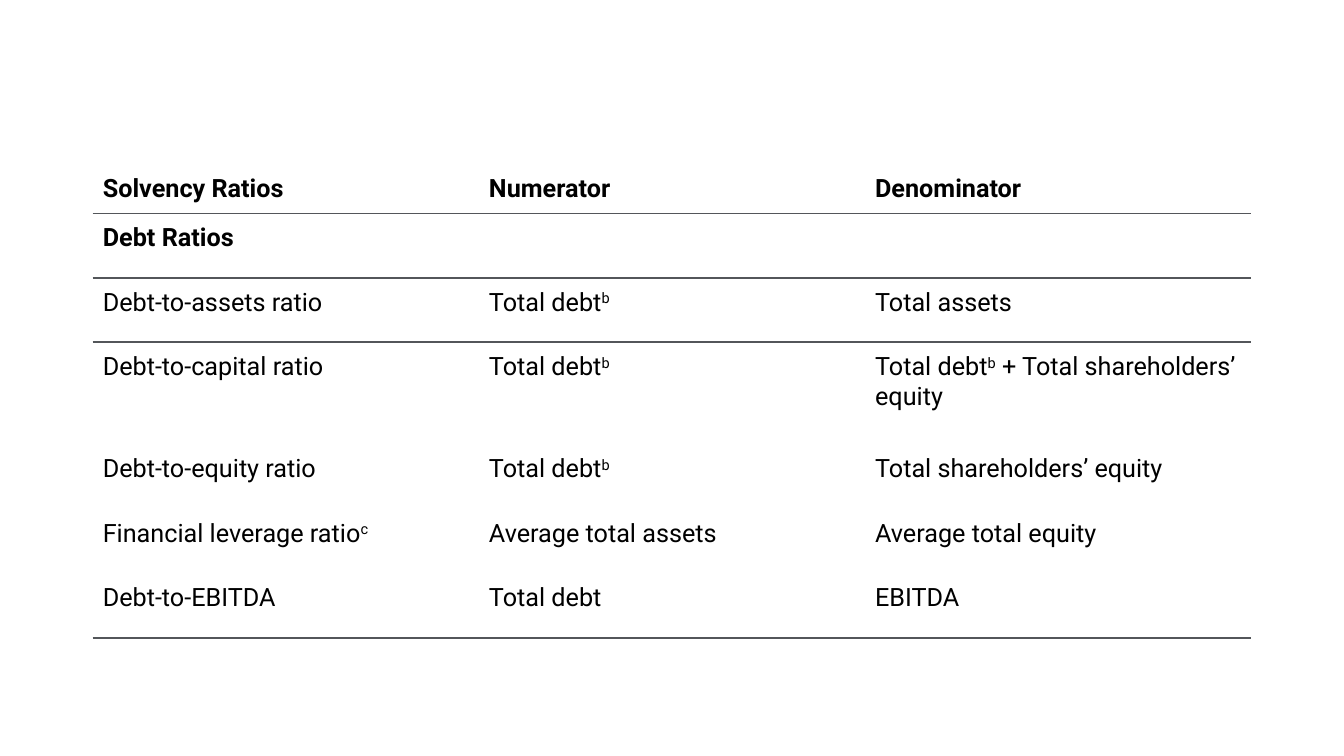
from lxml.etree import SubElement
from pptx import Presentation
from pptx.dml.color import RGBColor
from pptx.enum.text import MSO_ANCHOR
from pptx.oxml.ns import qn
from pptx.util import Inches, Pt

BLACK = RGBColor(0x00, 0x00, 0x00)
RULE_GRAY = RGBColor(0x53, 0x56, 0x5A)
NO_GRID_STYLE = "{2D5ABB26-0587-4C30-8999-92F81FD0307C}"

WIDTH, HEIGHT = Inches(13.33), Inches(7.5)
COLUMN, ROW, TALL_ROW = Inches(3.83), Inches(0.64), Inches(1.01)

# Text between carets is superscript
RATIOS = [
    ("Solvency Ratios", "Numerator", "Denominator"),
    ("Debt Ratios", "", ""),
    ("Debt-to-assets ratio", "Total debt^b^", "Total assets"),
    ("Debt-to-capital ratio", "Total debt^b^",
     "Total debt^b^ + Total shareholders’ equity"),
    ("Debt-to-equity ratio", "Total debt^b^", "Total shareholders’ equity"),
    ("Financial leverage ratio^c^", "Average total assets",
     "Average total equity"),
    ("Debt-to-EBITDA", "Total debt", "EBITDA"),
]
HEADER, CAPITAL = 0, 3
BOLD_ROWS = {0, 1}
RULED_ROWS = {0, 1, len(RATIOS) - 1}  # rows with a rule beneath


class SlideBuilder:
    font = {"name": "Roboto", "size": Pt(18)}
    margins = dict.fromkeys(
        ("margin_left", "margin_right", "margin_top", "margin_bottom"),
        Inches(0.1))

    def __init__(self, presentation):
        self.slide = presentation.slides.add_slide(
            presentation.slide_layouts[6])

    def table(self, left, top, entries, tall_rows):
        heights = [TALL_ROW if r in tall_rows else ROW
                   for r in range(len(entries))]
        columns = len(entries[0])
        table = self.slide.shapes.add_table(
            len(entries), columns, left, top,
            COLUMN * columns, sum(heights)).table
        table.first_row = table.horz_banding = False
        table._tbl.tblPr.find(qn("a:tableStyleId")).text = NO_GRID_STYLE
        for column in table.columns:
            column.width = COLUMN
        for r, (row, height) in enumerate(zip(table.rows, heights)):
            row.height = height
            for cell, entry in zip(row.cells, entries[r]):
                self.cell(cell, entry, r)
        return table

    def cell(self, cell, entry, r):
        anchor = MSO_ANCHOR.BOTTOM if r == HEADER else MSO_ANCHOR.TOP
        for name, value in {**self.margins, "vertical_anchor": anchor}.items():
            setattr(cell, name, value)
        self.text(cell.text_frame.paragraphs[0], entry, r in BOLD_ROWS)
        if r - 1 in RULED_ROWS:
            self.rule(cell, "a:lnT")
        if r in RULED_ROWS:
            self.rule(cell, "a:lnB")
        cell.fill.background()

    def text(self, paragraph, entry, bold):
        for name, value in {**self.font, "bold": bold}.items():
            setattr(paragraph.font, name, value)
        for i, part in enumerate(entry.split("^")):
            if not part:
                continue
            run = paragraph.add_run()
            run.text = part
            for name, value in {**self.font, "bold": bold}.items():
                setattr(run.font, name, value)
            run.font.color.rgb = BLACK
            if i % 2:
                run.font._element.set("baseline", "30000")

    def rule(self, cell, side):
        line = SubElement(cell._tc.get_or_add_tcPr(), qn(side),
                          w=str(Pt(1.5)))
        fill = SubElement(line, qn("a:solidFill"))
        SubElement(fill, qn("a:srgbClr"), val=str(RULE_GRAY))


def main():
    presentation = Presentation()
    presentation.slide_width, presentation.slide_height = WIDTH, HEIGHT
    builder = SlideBuilder(presentation)

    # Solvency ratios with their definitions
    builder.table(int(WIDTH * 0.069), int(HEIGHT * 0.197), RATIOS, {CAPITAL})

    presentation.save("out.pptx")


if __name__ == "__main__":
    main()
